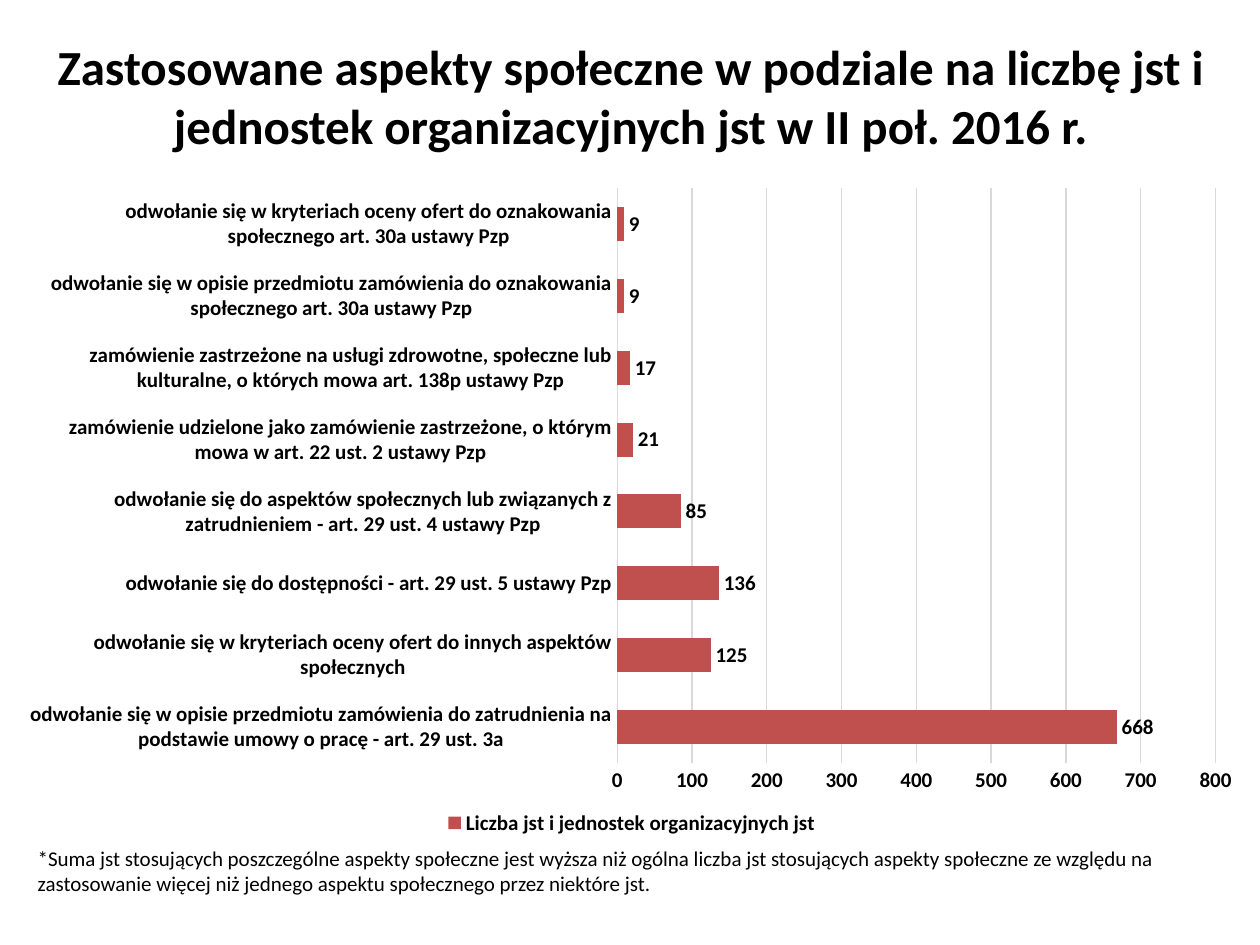
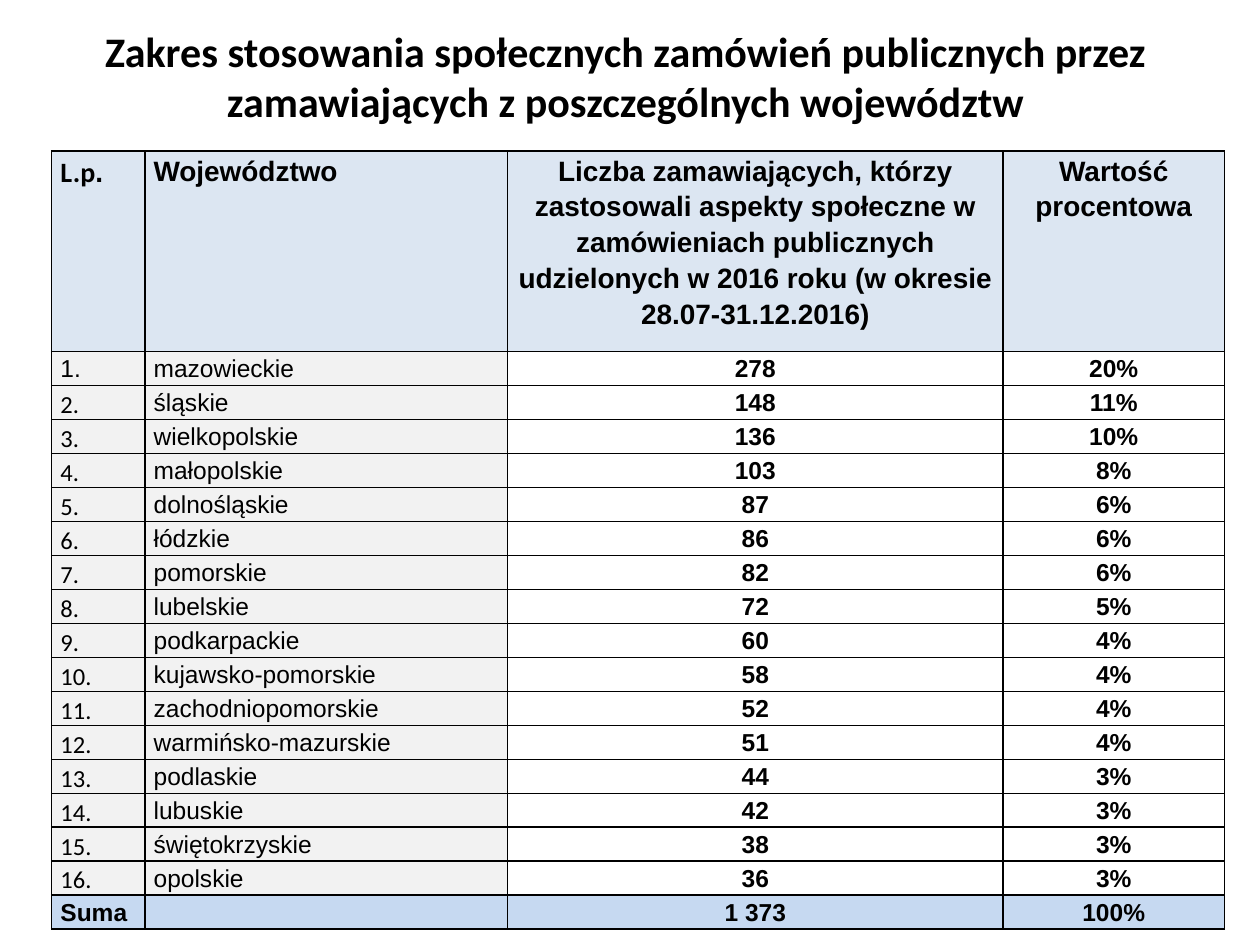
from lxml import etree
from pptx import Presentation
from pptx.chart.data import CategoryChartData
from pptx.dml.color import RGBColor
from pptx.enum.chart import (XL_CHART_TYPE, XL_LABEL_POSITION,
                             XL_LEGEND_POSITION, XL_TICK_MARK)
from pptx.enum.text import MSO_ANCHOR, PP_ALIGN
from pptx.oxml import parse_xml
from pptx.oxml.ns import nsdecls, qn
from pptx.util import Inches, Pt

BAR = XL_CHART_TYPE.BAR_CLUSTERED
OUTSIDE = XL_LABEL_POSITION.OUTSIDE_END
BOTTOM = XL_LEGEND_POSITION.BOTTOM
NO_TICK = XL_TICK_MARK.NONE
LEFT, CENTER, JUSTIFY = PP_ALIGN.LEFT, PP_ALIGN.CENTER, PP_ALIGN.JUSTIFY
TOP, MIDDLE = MSO_ANCHOR.TOP, MSO_ANCHOR.MIDDLE

COLORS = {"text": "000000", "white": "FFFFFF", "grid": "D9D9D9",
          "bar": "C0504D", "head": "DCE6F2", "name": "F2F2F2",
          "total": "C6D9F1"}
BODY, CELL = "Calibri", "Arial"

ASPECTS = [
    ("odwołanie się w opisie przedmiotu zamówienia do zatrudnienia na "
     "podstawie umowy o pracę - art. 29 ust. 3a", 668),
    ("odwołanie się w kryteriach oceny ofert do innych aspektów "
     "społecznych", 125),
    ("odwołanie się do dostępności - art. 29 ust. 5 ustawy Pzp", 136),
    ("odwołanie się do aspektów społecznych lub związanych z "
     "zatrudnieniem - art. 29 ust. 4 ustawy Pzp", 85),
    ("zamówienie udzielone jako zamówienie zastrzeżone, o którym mowa w "
     "art. 22 ust. 2 ustawy Pzp", 21),
    ("zamówienie zastrzeżone na usługi zdrowotne, społeczne lub "
     "kulturalne, o których mowa art. 138p ustawy Pzp", 17),
    ("odwołanie się w opisie przedmiotu zamówienia do oznakowania "
     "społecznego art. 30a ustawy Pzp", 9),
    ("odwołanie się w kryteriach oceny ofert do oznakowania "
     "społecznego art. 30a ustawy Pzp", 9),
]

HEADS = ["L.p.", "Województwo",
         "Liczba zamawiających, którzy zastosowali aspekty społeczne w "
         "zamówieniach publicznych udzielonych w 2016 roku (w okresie "
         "28.07-31.12.2016)", "Wartość procentowa"]
REGIONS = [
    ("mazowieckie", 278, 20), ("śląskie", 148, 11),
    ("wielkopolskie", 136, 10), ("małopolskie", 103, 8),
    ("dolnośląskie", 87, 6), ("łódzkie", 86, 6), ("pomorskie", 82, 6),
    ("lubelskie", 72, 5), ("podkarpackie", 60, 4),
    ("kujawsko-pomorskie", 58, 4), ("zachodniopomorskie", 52, 4),
    ("warmińsko-mazurskie", 51, 4), ("podlaskie", 44, 3),
    ("lubuskie", 42, 3), ("świętokrzyskie", 38, 3), ("opolskie", 36, 3),
]
TOTAL = ["Suma", "", "1 373", "100%"]


def color(key):
    return RGBColor.from_string(COLORS[key])


class Deck:
    def __init__(self):
        self.prs = Presentation()
        self.prs.slide_width, self.prs.slide_height = Inches(10), Inches(7.5)
        self.slide = None

    def add(self):
        self.slide = self.prs.slides.add_slide(self.prs.slide_layouts[6])

    def style(self, font, size, bold=False, name=BODY):
        font.name, font.size, font.bold = name, Pt(size), bold
        font.color.rgb = color("text")

    def text(self, box, words, size, bold=False, align=LEFT, anchor=TOP):
        frame = self.slide.shapes.add_textbox(*map(Inches, box)).text_frame
        frame.word_wrap = True
        frame.vertical_anchor = anchor
        para = frame.paragraphs[0]
        para.text, para.alignment = words, align
        self.style(para.font, size, bold)

    def title(self, box, words, size):
        self.text(box, words, size, True, CENTER, MIDDLE)

    def chart(self, box, name, pairs, plot_box):
        data = CategoryChartData()
        data.categories = [label for label, _ in pairs]
        data.add_series(name, [value for _, value in pairs])
        chart = self.slide.shapes.add_chart(
            BAR, *map(Inches, box), data).chart
        chart.has_title = False
        self.style(chart.font, 12, True)
        chart.has_legend = True
        chart.legend.position = BOTTOM
        chart.legend.include_in_layout = False
        self.style(chart.legend.font, 12, True)

        # Bars and their values
        plot = chart.plots[0]
        plot.gap_width, plot.vary_by_categories = 110, False
        fill = plot.series[0].format.fill
        fill.solid()
        fill.fore_color.rgb = color("bar")
        plot.has_data_labels = True
        labels = plot.data_labels
        labels.show_value, labels.position = True, OUTSIDE
        self.style(labels.font, 12, True)

        # Axes
        cats, vals = chart.category_axis, chart.value_axis
        for axis in (cats, vals):
            axis.major_tick_mark = axis.minor_tick_mark = NO_TICK
            self.style(axis.tick_labels.font, 12, True)
        vals.minimum_scale, vals.maximum_scale, vals.major_unit = 0, 800, 100
        vals.format.line.fill.background()
        cats.has_major_gridlines, vals.has_major_gridlines = False, True
        for line in (cats.format.line, vals.major_gridlines.format.line):
            line.color.rgb, line.width = color("grid"), Pt(0.75)

        # Fixed inner plot area
        area = plot_box_parent = chart._chartSpace.chart.plotArea
        for old in area.findall(qn("c:layout")):
            plot_box_parent.remove(old)
        marks = [("layoutTarget", "inner"), ("xMode", "edge"),
                 ("yMode", "edge"), *zip("xywh", plot_box)]
        layout = parse_xml(f"<c:layout {nsdecls('c')}><c:manualLayout/>"
                           "</c:layout>")
        for tag, value in marks:
            etree.SubElement(layout[0], qn(f"c:{tag}"), val=str(value))
        area.insert(0, layout)

    def cell(self, cell, words, size, bold, align, fill, name=CELL):
        cell.margin_left = cell.margin_right = Inches(0.07)
        cell.margin_top = cell.margin_bottom = 0
        para = cell.text_frame.paragraphs[0]
        para.alignment, para.line_spacing = align, 1.15
        self.style(para.font, size, bold, name)
        if words:
            para.add_run().text = words
        props = cell._tc.get_or_add_tcPr()
        for side in ("lnL", "lnR", "lnT", "lnB"):
            props.append(parse_xml(
                f'<a:{side} {nsdecls("a")} w="12700"><a:solidFill>'
                f'<a:srgbClr val="{COLORS["text"]}"/></a:solidFill>'
                f'</a:{side}>'))
        cell.fill.solid()
        cell.fill.fore_color.rgb = color(fill)
        return para

    def table(self, box, widths, heights):
        table = self.slide.shapes.add_table(
            len(heights), len(widths), *map(Inches, box)).table
        table.first_row = table.horz_banding = False
        for column, width in zip(table.columns, widths):
            column.width = Inches(width)
        for row, height in zip(table.rows, heights):
            row.height = Inches(height)
        return table


def main():
    deck = Deck()

    # Slide 1: social aspects by number of units
    deck.add()
    deck.title((0.35, 0.13, 9.31, 1.25),
               "Zastosowane aspekty społeczne w podziale na liczbę jst i "
               "jednostek organizacyjnych jst w II poł. 2016 r.", 28)
    deck.chart((0.17, 0.92, 9.69, 5.75),
               "Liczba jst i jednostek organizacyjnych jst", ASPECTS,
               (0.488, 0.1, 0.49, 0.793))
    deck.text((0.2, 6.66, 9.69, 0.5),
              "*Suma jst stosujących poszczególne aspekty społeczne jest "
              "wyższa niż ogólna liczba jst stosujących aspekty społeczne ze "
              "względu na zastosowanie więcej niż jednego aspektu "
              "społecznego przez niektóre jst.", 12)

    # Slide 2: buyers by region
    deck.add()
    deck.title((0.2, 0, 9.53, 1.2),
               "Zakres stosowania społecznych zamówień publicznych przez "
               "zamawiających z poszczególnych województw", 24)
    table = deck.table((0.41, 1.2, 9.31, 6.24), (0.74, 2.88, 3.93, 1.76),
                       [1.59] + [0.27] * (len(REGIONS) + 1))
    aligns = (JUSTIFY, JUSTIFY, CENTER, CENTER)
    last = len(REGIONS) + 1
    for col, align in enumerate(aligns):
        words = HEADS[col] if col else "L.p"
        para = deck.cell(table.cell(0, col), words, 16, True, align, "head",
                         CELL if col else BODY)
        if col == 0:
            dot = para.add_run()
            dot.text, dot.font.name = ".", CELL
        deck.cell(table.cell(last, col), TOTAL[col], 14, True, align, "total")
    for row, (region, count, share) in enumerate(REGIONS, 1):
        words = (f"{row}.", region, str(count), f"{share}%")
        for col, align in enumerate(aligns):
            number = col > 1
            name = BODY if col == 0 and row > 1 else CELL
            deck.cell(table.cell(row, col), words[col], 14, number, align,
                      "white" if number else "name", name)

    deck.prs.save("out.pptx")


if __name__ == "__main__":
    main()
